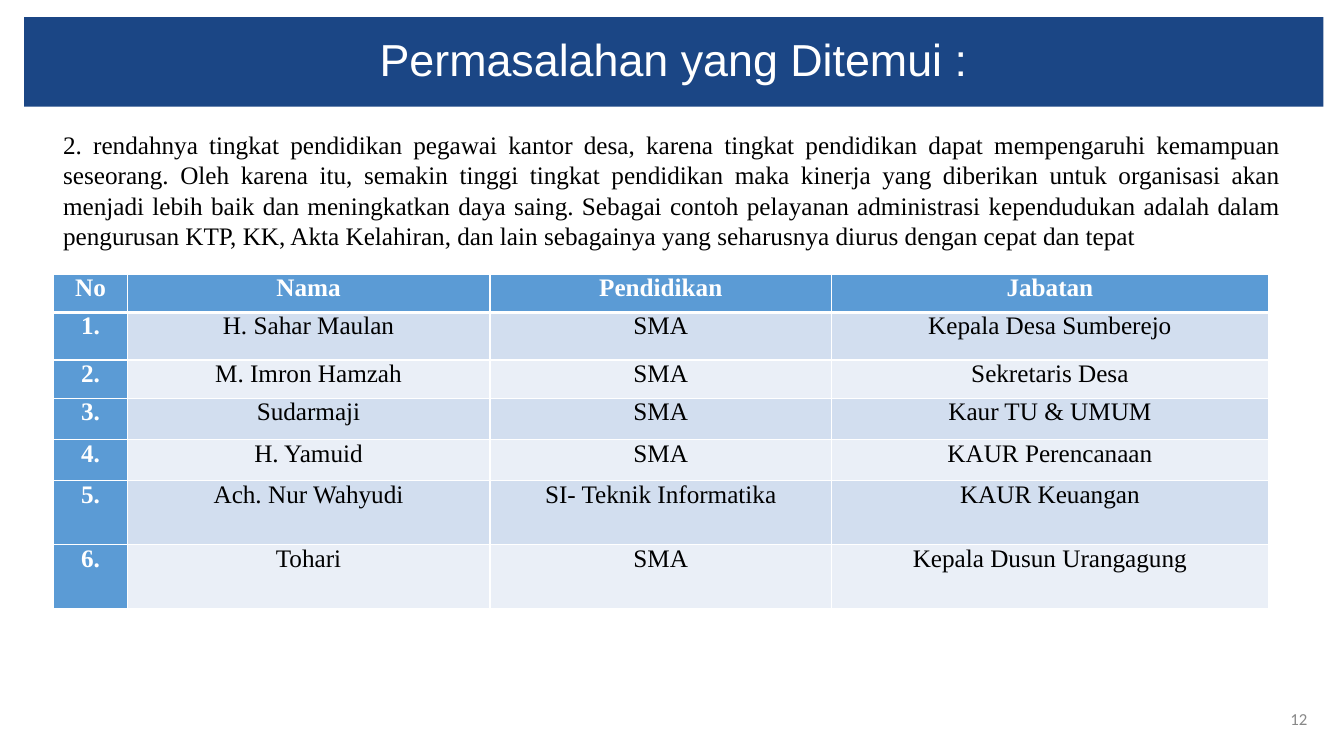
"""Build a slide on village staff education levels."""
from dataclasses import dataclass

from lxml import etree
from pptx import Presentation
from pptx.dml.color import RGBColor
from pptx.enum.shapes import MSO_SHAPE
from pptx.enum.text import MSO_ANCHOR, PP_ALIGN
from pptx.oxml.ns import qn
from pptx.util import Pt

RECTANGLE = MSO_SHAPE.RECTANGLE
MIDDLE, TOP = MSO_ANCHOR.MIDDLE, MSO_ANCHOR.TOP
CENTER, JUSTIFY, RIGHT = PP_ALIGN.CENTER, PP_ALIGN.JUSTIFY, PP_ALIGN.RIGHT


@dataclass(frozen=True)
class Theme:
    """Colours, fonts and type sizes of the slide."""
    banner: str = "1B4685"
    accent: str = "5B9BD5"
    bands: tuple = ("D2DEEF", "EAEFF7")
    white: str = "FFFFFF"
    black: str = "000000"
    grey: str = "888888"
    title_font: str = "Arial"
    body_font: str = "Times New Roman"
    number_font: str = "Calibri"
    title_size: int = 32
    body_size: int = 18
    number_size: int = 12


THEME = Theme()

PROBLEM = (
    "2. rendahnya tingkat pendidikan pegawai kantor desa, karena tingkat "
    "pendidikan dapat mempengaruhi kemampuan seseorang. Oleh karena itu, "
    "semakin tinggi tingkat pendidikan maka kinerja yang diberikan untuk "
    "organisasi akan menjadi lebih baik dan meningkatkan daya saing. Sebagai "
    "contoh pelayanan administrasi kependudukan adalah dalam pengurusan KTP, "
    "KK, Akta Kelahiran, dan lain sebagainya yang seharusnya diurus dengan "
    "cepat dan tepat"
)
HEADINGS = ("No", "Nama", "Pendidikan", "Jabatan")
STAFF = (
    ("H. Sahar Maulan", "SMA", "Kepala Desa Sumberejo"),
    ("M. Imron Hamzah", "SMA", "Sekretaris Desa"),
    ("Sudarmaji", "SMA", "Kaur TU & UMUM"),
    ("H. Yamuid", "SMA", "KAUR Perencanaan"),
    ("Ach. Nur Wahyudi", "SI- Teknik Informatika", "KAUR Keuangan"),
    ("Tohari", "SMA", "Kepala Dusun Urangagung"),
)
COLUMN_WIDTHS = (52.3, 259.2, 244, 312)
ROW_HEIGHTS = (27.2, 34, 27.4, 29.5, 29.5, 45.5, 45.5)


def write(frame, text, align, font_name, size, color, bold=False):
    """Set one paragraph of text and format it."""
    frame.text = text
    paragraph = frame.paragraphs[0]
    paragraph.alignment = align
    font = paragraph.runs[0].font
    font.name, font.size, font.bold = font_name, Pt(size), bold
    font.color.rgb = RGBColor.from_string(color)
    return paragraph


def paint(target, color):
    """Give a shape or cell a solid fill."""
    target.fill.solid()
    target.fill.fore_color.rgb = RGBColor.from_string(color)


def add_banner(slide, text):
    """Add the filled title banner."""
    banner = slide.shapes.add_shape(
        RECTANGLE, Pt(17.3), Pt(12.2), Pt(928), Pt(64))
    banner.shadow.inherit = False
    paint(banner, THEME.banner)
    banner.line.fill.background()
    banner.text_frame.vertical_anchor = MIDDLE
    banner.text_frame.word_wrap = True
    heading = write(banner.text_frame, text, CENTER, THEME.title_font,
                    THEME.title_size, THEME.white)
    heading.line_spacing = 0.9


def add_text(slide, box, text, align, anchor, font_name, size, color):
    """Add a wrapping text box."""
    frame = slide.shapes.add_textbox(*map(Pt, box)).text_frame
    frame.word_wrap = True
    frame.vertical_anchor = anchor
    write(frame, text, align, font_name, size, color)


def set_borders(cell, **widths):
    """Draw white cell borders with the given widths by side."""
    properties = cell._tc.get_or_add_tcPr()
    for side in "LRTB":
        line = etree.SubElement(properties, qn(f"a:ln{side}"),
                                w=str(Pt(widths.get(side, 1))))
        fill = etree.SubElement(line, qn("a:solidFill"))
        etree.SubElement(fill, qn("a:srgbClr"), val=THEME.white)


def fill_cell(cell, text, row, column):
    """Write and style one table cell by its place in the table."""
    is_heading = row == 0 or column == 0
    cell.margin_left = cell.margin_right = Pt(5)
    cell.margin_top = cell.margin_bottom = Pt(0)
    rule_below_header = {0: {"B": 3}, 1: {"T": 3}}
    set_borders(cell, **rule_below_header.get(row, {}))
    paint(cell, THEME.accent if is_heading else THEME.bands[(row - 1) % 2])
    write(cell.text_frame, text, CENTER, THEME.body_font, THEME.body_size,
          THEME.white if is_heading else THEME.black, is_heading)


def add_staff_table(slide):
    """Add the numbered table of staff, education and position."""
    rows = [HEADINGS] + [
        (f"{number}.", *person) for number, person in enumerate(STAFF, 1)]
    table = slide.shapes.add_table(
        len(rows), len(HEADINGS), Pt(38.5), Pt(196),
        Pt(sum(COLUMN_WIDTHS)), Pt(sum(ROW_HEIGHTS))).table
    for column, width in zip(table.columns, COLUMN_WIDTHS):
        column.width = Pt(width)
    for row, height in zip(table.rows, ROW_HEIGHTS):
        row.height = Pt(height)
    for r, texts in enumerate(rows):
        for c, text in enumerate(texts):
            fill_cell(table.cell(r, c), text, r, c)


def main():
    """Build and save the slide."""
    deck = Presentation()
    deck.slide_width, deck.slide_height = Pt(960), Pt(540)
    slide = deck.slides.add_slide(deck.slide_layouts[6])
    add_text(slide, (900, 499, 41, 28.8), "12", RIGHT, MIDDLE,
             THEME.number_font, THEME.number_size, THEME.grey)
    add_banner(slide, "Permasalahan yang Ditemui :")
    add_text(slide, (38, 88.9, 884, 94.5), PROBLEM, JUSTIFY, TOP,
             THEME.body_font, THEME.body_size, THEME.black)
    add_staff_table(slide)
    deck.save("out.pptx")


if __name__ == "__main__":
    main()
